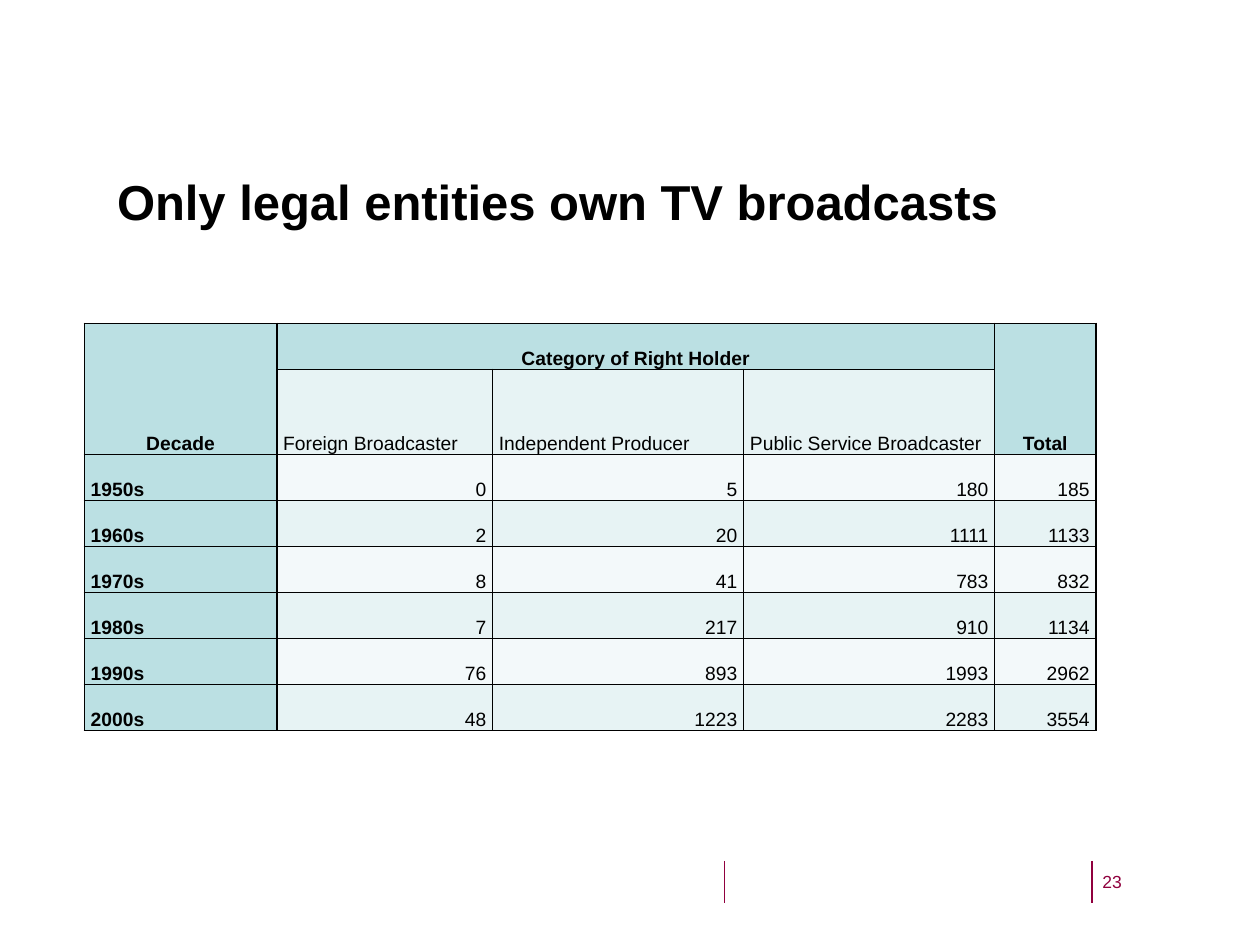
from lxml import etree
from pptx import Presentation
from pptx.dml.color import RGBColor
from pptx.enum.shapes import MSO_CONNECTOR
from pptx.enum.text import MSO_ANCHOR, PP_ALIGN
from pptx.oxml import parse_xml
from pptx.oxml.ns import nsdecls, qn
from pptx.util import Pt

STRAIGHT = MSO_CONNECTOR.STRAIGHT
BOTTOM = MSO_ANCHOR.BOTTOM
LEFT, CENTER, RIGHT = PP_ALIGN.LEFT, PP_ALIGN.CENTER, PP_ALIGN.RIGHT

BLACK = RGBColor(0x00, 0x00, 0x00)
BURGUNDY = RGBColor(0x90, 0x00, 0x3E)
TEAL = RGBColor(0xBB, 0xE0, 0xE3)
LIGHT_TEAL = RGBColor(0xE7, 0xF3, 0xF4)
PALE_TEAL = RGBColor(0xF3, 0xF9, 0xFA)

FONT = "Arial"
HEADER_ROWS = 2
COLUMN_WIDTHS = [110, 123.3, 143.5, 143.5, 57.8]
ROW_HEIGHTS = [26.3, 48.6] + [26.3] * 6
RIGHT_HOLDERS = [
    ["Decade", "Category of Right Holder", "", "", "Total"],
    ["", "Foreign Broadcaster", "Independent Producer", "Public Service Broadcaster", ""],
    ["1950s", "0", "5", "180", "185"],
    ["1960s", "2", "20", "1111", "1133"],
    ["1970s", "8", "41", "783", "832"],
    ["1980s", "7", "217", "910", "1134"],
    ["1990s", "76", "893", "1993", "2962"],
    ["2000s", "48", "1223", "2283", "3554"],
]


def style_paragraph(paragraph, size, color, bold=False):
    font = paragraph.font
    font.name, font.size, font.bold = FONT, Pt(size), bold
    font.color.rgb = color


def add_label(slide, text, box, size, color, bold=False, inset=(0, 0)):
    frame = slide.shapes.add_textbox(*map(Pt, box)).text_frame
    frame.word_wrap = True
    frame.margin_left = frame.margin_right = Pt(inset[0])
    frame.margin_top = frame.margin_bottom = Pt(inset[1])
    frame.text = text
    style_paragraph(frame.paragraphs[0], size, color, bold)


def add_footer_rule(slide, x):
    rule = slide.shapes.add_connector(STRAIGHT, Pt(x), Pt(492), Pt(x), Pt(516))
    rule.line.color.rgb = BURGUNDY
    rule.line.width = Pt(0.75)
    etree.SubElement(rule._element.spPr, qn("a:effectLst"))


def add_borders(cell):
    properties = cell._tc.get_or_add_tcPr()
    for side in ("lnL", "lnR", "lnT", "lnB"):
        properties.append(parse_xml(
            f'<a:{side} {nsdecls("a")} w="{Pt(1)}"><a:solidFill>'
            f'<a:srgbClr val="{BLACK}"/></a:solidFill></a:{side}>'))


def cell_look(row, column):
    """Return the fill, alignment and weight for a table position."""
    if row == 0 or (row < HEADER_ROWS and column in (0, 4)):
        return TEAL, CENTER, True
    if column == 0:
        return TEAL, LEFT, True
    fill = LIGHT_TEAL if row % 2 else PALE_TEAL
    return fill, LEFT if row < HEADER_ROWS else RIGHT, False


def fill_cell(cell, text, fill, alignment, bold):
    add_borders(cell)
    cell.fill.solid()
    cell.fill.fore_color.rgb = fill
    cell.vertical_anchor = BOTTOM
    cell.margin_left = cell.margin_right = Pt(3.6)
    cell.margin_top = cell.margin_bottom = 0
    cell.text = text
    paragraph = cell.text_frame.paragraphs[0]
    paragraph.alignment = alignment
    paragraph.line_spacing = 1.07
    style_paragraph(paragraph, 11, BLACK, bold)


def add_holder_table(slide):
    table = slide.shapes.add_table(
        len(ROW_HEIGHTS), len(COLUMN_WIDTHS), Pt(48.2), Pt(184.8),
        Pt(sum(COLUMN_WIDTHS)), Pt(sum(ROW_HEIGHTS))).table
    for column, width in zip(table.columns, COLUMN_WIDTHS):
        column.width = Pt(width)
    for row, height in zip(table.rows, ROW_HEIGHTS):
        row.height = Pt(height)
    for r, values in enumerate(RIGHT_HOLDERS):
        for c, value in enumerate(values):
            fill_cell(table.cell(r, c), value, *cell_look(r, c))
    for column in (0, 4):
        table.cell(0, column).merge(table.cell(1, column))
    table.cell(0, 1).merge(table.cell(0, 3))


def main():
    deck = Presentation()
    deck.slide_width, deck.slide_height = Pt(720), Pt(540)
    slide = deck.slides.add_slide(deck.slide_layouts[6])
    for x in (624, 414):
        add_footer_rule(slide, x)
    add_holder_table(slide)
    add_label(slide, "23", (630, 498, 42, 31), 10, BURGUNDY)
    add_label(slide, "Only legal entities own TV broadcasts", (59.8, 94.3, 556, 41),
              28, BLACK, bold=True, inset=(7.2, 3.6))
    deck.save("out.pptx")


if __name__ == "__main__":
    main()
